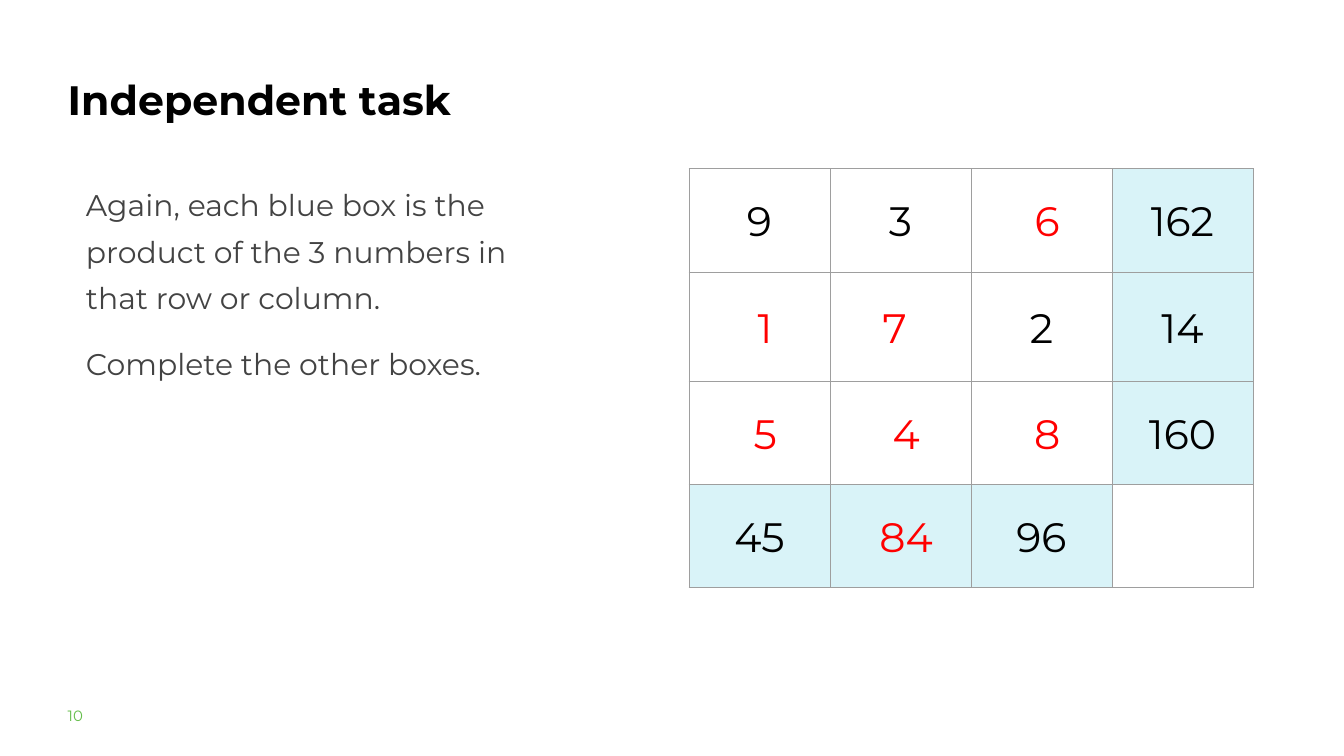
"""Build the multiplication grid task slide."""
import dataclasses
import typing

import lxml.etree
import pptx
import pptx.dml.color
import pptx.enum.text
import pptx.oxml.ns
import pptx.util

Cm = pptx.util.Cm
Pt = pptx.util.Pt
RGB = pptx.dml.color.RGBColor


@dataclasses.dataclass(frozen=True)
class Theme:
    font: str = "Montserrat"
    large: int = 44
    body: int = 32
    small: int = 16
    black: str = "000000"
    grey: str = "434343"
    green: str = "65BE4B"
    answer: str = "FF0000"
    product: str = "D9F3F8"
    border: str = "9E9E9E"
    border_width: float = 0.75
    text_spacing: float = 1.3
    cell_spacing: float = 1.07


THEME = Theme()


class TextBlock(typing.NamedTuple):
    left: float
    top: float
    width: float
    height: float
    paragraphs: tuple[str, ...]
    size: int
    color: str
    bold: bool = False
    gap: int = 0


class GridCell(typing.NamedTuple):
    text: str
    answer: bool = False
    shift: float = 0


NUDGE = 0.43
CELL_MARGIN = 0.18
GRID_LEFT, GRID_TOP = 26.04, 6.38
COLUMN_WIDTH = 5.33
ROW_HEIGHTS = (3.91, 4.11, 3.91, 3.91)

BLOCKS = (
    TextBlock(2.31, 2.13, 18.06, 2.49, ("Independent task",), THEME.large, THEME.black, bold=True),
    TextBlock(2.31, 26.37, 2.26, 1.07, ("10",), THEME.small, THEME.green),
    TextBlock(3, 6.53, 16.97, 10.41,
              ("Again, each blue box is the product of the 3 numbers in that row or column.",
               "Complete the other boxes."), THEME.body, THEME.grey, gap=20),
)


def found(text: str, shift: float = NUDGE) -> GridCell:
    """Return a cell holding an answer."""
    return GridCell(text, True, shift)


GRID = (
    (GridCell("9"), GridCell("3"), found("6"), GridCell("162")),
    (found("1"), found("7", -NUDGE), GridCell("2"), GridCell("14")),
    (found("5"), found("4"), found("8"), GridCell("160")),
    (GridCell("45"), found("84"), GridCell("96"), GridCell("")),
)


def set_all(obj: typing.Any, values: dict[str, typing.Any]) -> None:
    """Set each named attribute on an object."""
    for name, value in values.items():
        setattr(obj, name, value)


def add_run(p: typing.Any, text: str, size: int, color: str, bold: bool = False) -> None:
    """Append a formatted run to a paragraph."""
    r = p.add_run()
    r.text = text
    set_all(r.font, {"name": THEME.font, "size": Pt(size), "bold": bold})
    r.font.color.rgb = RGB.from_string(color)


def draw_block(s: typing.Any, block: TextBlock) -> None:
    """Draw a wrapped text box."""
    sp = s.shapes.add_textbox(Cm(block.left), Cm(block.top), Cm(block.width), Cm(block.height))
    tf = sp.text_frame
    tf.word_wrap = True
    for i, text in enumerate(block.paragraphs):
        p = tf.add_paragraph() if i else tf.paragraphs[0]
        set_all(p, {"line_spacing": THEME.text_spacing, "space_before": Pt(block.gap if i else 0)})
        add_run(p, text, block.size, block.color, block.bold)


def add_borders(cell: typing.Any) -> None:
    """Outline all four sides of a table cell."""
    qn = pptx.oxml.ns.qn
    tc_pr = cell._tc.get_or_add_tcPr()
    for side in ("lnL", "lnR", "lnT", "lnB"):
        ln = lxml.etree.SubElement(tc_pr, qn(f"a:{side}"), w=str(Pt(THEME.border_width)))
        fill = lxml.etree.SubElement(ln, qn("a:solidFill"))
        lxml.etree.SubElement(fill, qn("a:srgbClr"), val=THEME.border)


def draw_cell(cell: typing.Any, item: GridCell, is_product: bool) -> None:
    """Format and fill one grid cell."""
    add_borders(cell)
    if is_product:
        cell.fill.solid()
        cell.fill.fore_color.rgb = RGB.from_string(THEME.product)
    else:
        cell.fill.background()
    set_all(cell, {
        "margin_left": Cm(CELL_MARGIN + max(item.shift, 0)),
        "margin_right": Cm(CELL_MARGIN + max(-item.shift, 0)),
        "margin_top": 0,
        "margin_bottom": 0,
        "vertical_anchor": pptx.enum.text.MSO_ANCHOR.MIDDLE,
    })
    if item.text:
        p = cell.text_frame.paragraphs[0]
        set_all(p, {"alignment": pptx.enum.text.PP_ALIGN.CENTER, "line_spacing": THEME.cell_spacing})
        add_run(p, item.text, THEME.large, THEME.answer if item.answer else THEME.black)


def draw_grid(s: typing.Any) -> None:
    """Draw the number grid with its products in the last row and column."""
    last = len(GRID) - 1
    table = s.shapes.add_table(len(GRID), len(GRID[0]), Cm(GRID_LEFT), Cm(GRID_TOP),
                               Cm(COLUMN_WIDTH * len(GRID[0])), Cm(sum(ROW_HEIGHTS))).table
    set_all(table, {"first_row": False, "horz_banding": False})
    for column in table.columns:
        column.width = Cm(COLUMN_WIDTH)
    for i, items in enumerate(GRID):
        table.rows[i].height = Cm(ROW_HEIGHTS[i])
        for j, item in enumerate(items):
            draw_cell(table.cell(i, j), item, (i == last) != (j == last))


def main() -> None:
    """Build and save the slide."""
    prs = pptx.Presentation()
    set_all(prs, {"slide_width": Cm(50.8), "slide_height": Cm(28.58)})
    s = prs.slides.add_slide(prs.slide_layouts[6])
    for block in BLOCKS:
        draw_block(s, block)
    draw_grid(s)
    prs.save("out.pptx")


if __name__ == "__main__":
    main()
